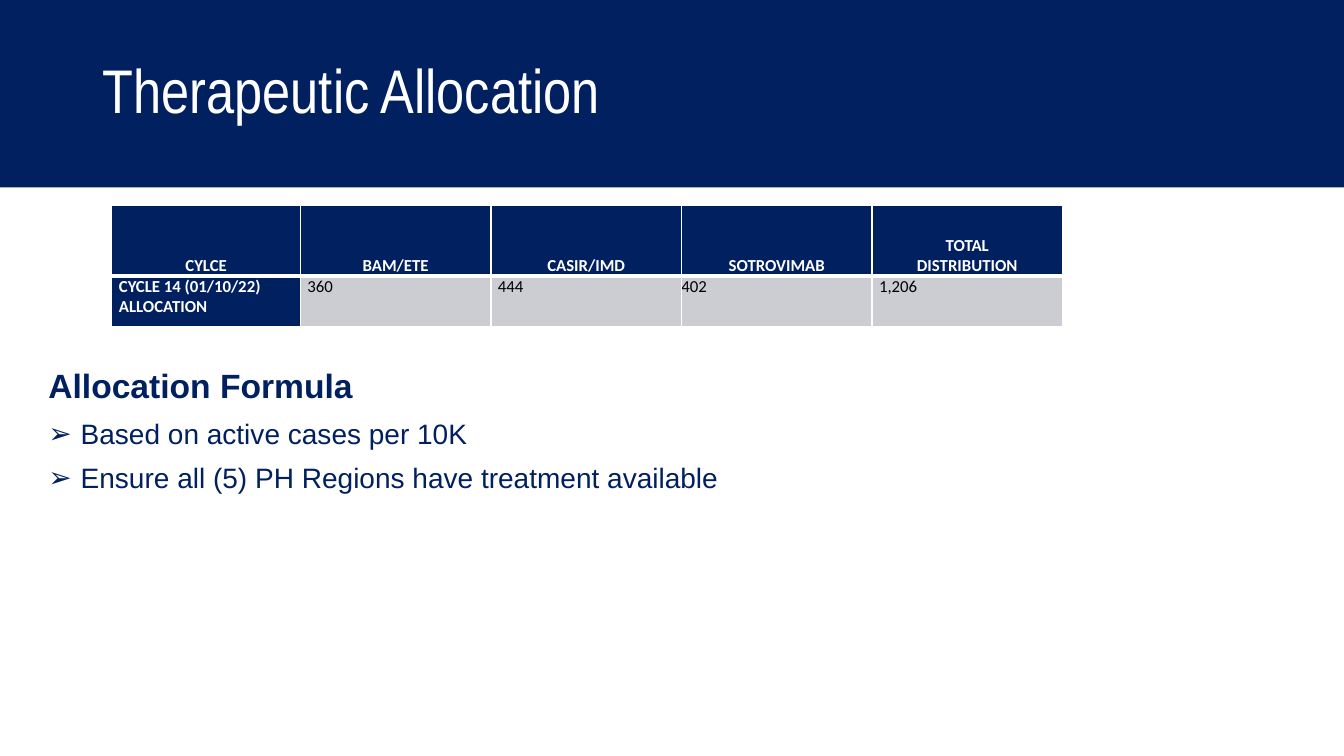
from lxml.etree import SubElement
from pptx import Presentation
from pptx.dml.color import RGBColor
from pptx.enum.shapes import MSO_SHAPE
from pptx.enum.text import MSO_ANCHOR, MSO_AUTO_SIZE, PP_ALIGN
from pptx.oxml.ns import qn
from pptx.util import Inches, Pt

NAVY = RGBColor(0x00, 0x20, 0x60)
WHITE = RGBColor(0xFF, 0xFF, 0xFF)
BLACK = RGBColor(0x00, 0x00, 0x00)
GRAY = RGBColor(0xCC, 0xCD, 0xD2)

TITLE = "Therapeutic Allocation"
HEADING = "Allocation Formula"
RULES = ["Based on active cases per 10K",
         "Ensure all (5) PH Regions have treatment available"]
ALLOCATION = [
    [["CYLCE"], ["BAM/ETE"], ["CASIR/IMD"], ["SOTROVIMAB"], ["TOTAL", "DISTRIBUTION"]],
    [["CYCLE 14 (01/10/22)", "ALLOCATION"], ["360"], ["444"], ["402"], ["1,206"]],
]
COLUMN_WIDTHS = [1.87] + [1.89] * 4
ROW_HEIGHTS = [0.7, 0.5]
FLUSH_COLUMN = 3


def add_text(paragraph, text, font_name, size, color, bold=False):
    run = paragraph.add_run()
    run.text = text
    run.font.name = font_name
    run.font.size = Pt(size)
    run.font.bold = bold
    run.font.color.rgb = color


def place(placeholder, left, top, width, height):
    placeholder.left, placeholder.top = Inches(left), Inches(top)
    placeholder.width, placeholder.height = Inches(width), Inches(height)
    placeholder.text_frame.word_wrap = True
    placeholder.text_frame.auto_size = MSO_AUTO_SIZE.NONE
    return placeholder.text_frame


def set_bullet(paragraph, indent=0, mark=None):
    properties = paragraph._p.get_or_add_pPr()
    properties.set("marL", str(Inches(indent)))
    properties.set("indent", str(-Inches(indent)))
    if mark:
        SubElement(properties, qn("a:buFont"), typeface="Arial")
        SubElement(properties, qn("a:buChar"), char=mark)
    else:
        SubElement(properties, qn("a:buNone"))


def set_borders(cell, widths):
    properties = cell._tc.get_or_add_tcPr()
    for side, width in zip("LRTB", widths):
        line = SubElement(properties, qn(f"a:ln{side}"), w=str(Pt(width)))
        fill = SubElement(line, qn("a:solidFill"))
        SubElement(fill, qn("a:srgbClr"), val=str(WHITE))


def fill_cell(cell, lines, row, column):
    header = row == 0
    emphasized = header or column == 0
    set_borders(cell, (1, 1, 1, 3) if header else (1, 1, 3, 1))
    cell.fill.solid()
    cell.fill.fore_color.rgb = NAVY if emphasized else GRAY
    cell.margin_left = cell.margin_right = Inches(0 if column == FLUSH_COLUMN else 0.07)
    cell.margin_top = cell.margin_bottom = 0
    cell.vertical_anchor = MSO_ANCHOR.BOTTOM if header else MSO_ANCHOR.TOP
    for number, line in enumerate(lines):
        frame = cell.text_frame
        paragraph = frame.add_paragraph() if number else frame.paragraphs[0]
        paragraph.alignment = PP_ALIGN.CENTER if header else PP_ALIGN.LEFT
        add_text(paragraph, line, "Calibri", 12, WHITE if emphasized else BLACK, emphasized)


def main():
    deck = Presentation()
    deck.slide_width, deck.slide_height = Inches(13.33), Inches(7.5)
    slide = deck.slides.add_slide(deck.slide_layouts[1])

    banner = slide.shapes.add_shape(MSO_SHAPE.RECTANGLE, 0, 0, deck.slide_width, Inches(1.86))
    banner.shadow.inherit = False
    banner.fill.solid()
    banner.fill.fore_color.rgb = NAVY
    banner.line.fill.background()
    slide.shapes._spTree.insert(2, banner._element)

    title = place(slide.shapes.title, 0.92, 0, 8.44, 1.85)
    title.vertical_anchor = MSO_ANCHOR.MIDDLE
    title.paragraphs[0].alignment = PP_ALIGN.LEFT
    title.paragraphs[0].line_spacing = 0.9
    add_text(title.paragraphs[0], TITLE, "Arial Narrow", 44, WHITE)

    formula = place(slide.placeholders[1], 0.38, 3.62, 11.83, 3.88)
    heading = formula.paragraphs[0]
    set_bullet(heading)
    heading.line_spacing = 0.9
    heading.space_before = Pt(0)
    add_text(heading, HEADING, "Arial", 24, NAVY, True)
    for rule in RULES:
        paragraph = formula.add_paragraph()
        set_bullet(paragraph, 0.32, "➢")
        paragraph.line_spacing = 0.9
        paragraph.space_before = Pt(10)
        add_text(paragraph, rule, "Arial", 20, NAVY)

    table = slide.shapes.add_table(
        len(ROW_HEIGHTS), len(COLUMN_WIDTHS), Inches(1.11), Inches(2.04),
        Inches(sum(COLUMN_WIDTHS)), Inches(sum(ROW_HEIGHTS))).table
    for column, width in zip(table.columns, COLUMN_WIDTHS):
        column.width = Inches(width)
    for row, height in zip(table.rows, ROW_HEIGHTS):
        row.height = Inches(height)
    for row, entries in enumerate(ALLOCATION):
        for column, lines in enumerate(entries):
            fill_cell(table.cell(row, column), lines, row, column)

    deck.save("out.pptx")


if __name__ == "__main__":
    main()
